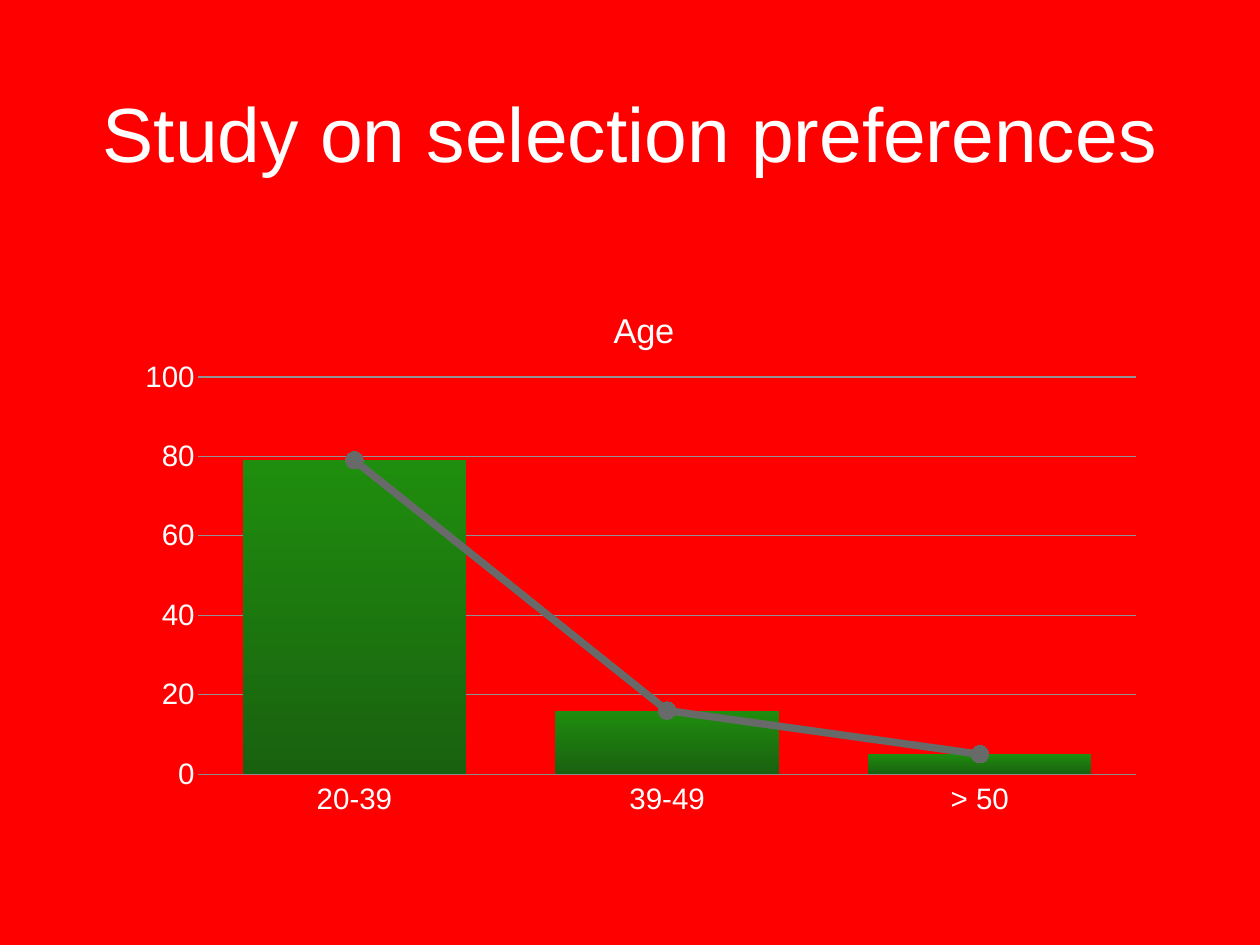
from dataclasses import dataclass

from lxml import etree
from pptx import Presentation
from pptx.chart.chart import Chart
from pptx.chart.data import CategoryChartData
from pptx.dml.color import RGBColor
from pptx.enum.chart import XL_CHART_TYPE, XL_MARKER_STYLE, XL_TICK_LABEL_POSITION, XL_TICK_MARK
from pptx.enum.text import MSO_ANCHOR, MSO_AUTO_SIZE, PP_ALIGN
from pptx.oxml.ns import qn
from pptx.util import Inches, Pt

COLUMN_CLUSTERED = XL_CHART_TYPE.COLUMN_CLUSTERED
CIRCLE = XL_MARKER_STYLE.CIRCLE
LABELS_LOW = XL_TICK_LABEL_POSITION.LOW
NO_TICKS = XL_TICK_MARK.NONE
MIDDLE = MSO_ANCHOR.MIDDLE
NO_AUTOFIT = MSO_AUTO_SIZE.NONE
CENTER = PP_ALIGN.CENTER


@dataclass(frozen=True)
class Theme:
    font: str = "Arial"
    background: str = "FF0000"
    text: str = "FFFFFF"
    column_top: str = "1F8D0E"
    column_bottom: str = "1A610F"
    trend: str = "686A69"
    axis: str = "8A8B89"
    grid: str = "929292"
    title_size: float = 62.4
    chart_title_size: float = 28
    label_size: float = 24


@dataclass(frozen=True)
class Series:
    name: str
    values: tuple[int, ...]


THEME = Theme()
AGE_GROUPS = ("20-39", "39-49", "> 50")
AGE_SHARES = (79, 16, 5)
SERIES = (Series("Series 1", AGE_SHARES), Series("Series 2", AGE_SHARES))


def color(value: str) -> RGBColor:
    return RGBColor.from_string(value)


def style_font(font, size: float) -> None:
    font.name = THEME.font
    font.size = Pt(size)
    font.bold = False
    font.color.rgb = color(THEME.text)


def style_line(line, value: str, width: float) -> None:
    line.width = Pt(width)
    line.color.rgb = color(value)


def add_chart_element(parent, tag: str, value: str | None = None):
    element = etree.SubElement(parent, qn(f"c:{tag}"))
    if value is not None:
        element.set("val", value)
    return element


def set_layout(parent, index: int, **settings: str | float) -> None:
    """Give a chart part a manual position, in fractions of the chart."""
    for old_layout in parent.findall(qn("c:layout")):
        parent.remove(old_layout)
    layout = add_chart_element(parent, "layout")
    parent.insert(index, layout)
    manual = add_chart_element(layout, "manualLayout")
    for tag, value in settings.items():
        add_chart_element(manual, tag, str(value))


def move_last_series_to_line(chart: Chart) -> None:
    column_plot = chart.plots[0]._element
    series = column_plot.findall(qn("c:ser"))[-1]
    for invert in series.findall(qn("c:invertIfNegative")):
        series.remove(invert)
    line_plot = etree.Element(qn("c:lineChart"))
    column_plot.addnext(line_plot)
    add_chart_element(line_plot, "grouping", "standard")
    add_chart_element(line_plot, "varyColors", "0")
    line_plot.append(series)
    add_chart_element(line_plot, "marker", "1")
    for axis_id in column_plot.findall(qn("c:axId")):
        add_chart_element(line_plot, "axId", axis_id.get("val"))


def style_series(chart: Chart) -> None:
    columns, trend = chart.plots
    columns.gap_width = 40
    columns.overlap = -10
    columns.vary_by_categories = False
    fill = columns.series[0].format.fill
    fill.gradient()
    fill.gradient_angle = 270
    for stop, position, value in zip(
        fill.gradient_stops, (0, 1), (THEME.column_top, THEME.column_bottom)
    ):
        stop.position = position
        stop.color.rgb = color(value)

    trend_series = trend.series[0]
    trend_series.smooth = False
    style_line(trend_series.format.line, THEME.trend, 6)
    marker = trend_series.marker
    marker.style = CIRCLE
    marker.size = 14
    marker.format.fill.solid()
    marker.format.fill.fore_color.rgb = color(THEME.trend)
    marker.format.line.fill.background()


def style_axes(chart: Chart) -> None:
    for axis in (chart.category_axis, chart.value_axis):
        axis.major_tick_mark = axis.minor_tick_mark = NO_TICKS
        axis.tick_labels.number_format = "General"
        axis.tick_labels.number_format_is_linked = False
        style_font(axis.tick_labels.font, THEME.label_size)
    chart.category_axis.tick_label_position = LABELS_LOW
    style_line(chart.category_axis.format.line, THEME.axis, 1)

    value_axis = chart.value_axis
    value_axis.minimum_scale = 0
    value_axis.maximum_scale = 100
    value_axis.major_unit = 20
    value_axis.format.line.fill.background()
    value_axis.has_major_gridlines = True
    style_line(value_axis.major_gridlines.format.line, THEME.grid, 1)


def add_slide_title(slide, text: str) -> None:
    title = slide.shapes.title
    title.left, title.top = Inches(1.04), Inches(0.44)
    title.width, title.height = Inches(12.14), Inches(2.1)
    frame = title.text_frame
    frame.text = text
    frame.auto_size = NO_AUTOFIT
    frame.word_wrap = True
    frame.vertical_anchor = MIDDLE
    frame.margin_left = frame.margin_right = Inches(0.06)
    frame.margin_top = frame.margin_bottom = Inches(0.06)
    paragraph = frame.paragraphs[0]
    paragraph.alignment = CENTER
    style_font(paragraph.runs[0].font, THEME.title_size)


def add_age_chart(slide) -> None:
    data = CategoryChartData()
    data.categories = AGE_GROUPS
    for series in SERIES:
        data.add_series(series.name, series.values)
    chart = slide.shapes.add_chart(
        COLUMN_CLUSTERED, Inches(1.56), Inches(3.36), Inches(11.27), Inches(5.98), data
    ).chart
    chart.has_legend = False
    style_font(chart.font, 10)
    move_last_series_to_line(chart)
    style_series(chart)
    style_axes(chart)

    # Chart title, laid over the chart area
    chart.has_title = True
    frame = chart.chart_title.text_frame
    frame.text = "Age"
    style_font(frame.paragraphs[0].runs[0].font, THEME.chart_title_size)
    title = chart.chart_title._element
    title.find(qn("c:overlay")).set("val", "1")
    set_layout(title, 1, xMode="edge", yMode="edge", x=0.47, y=0.01)

    # Inner plot area
    plot_area = chart.plots[0]._element.getparent()
    set_layout(plot_area, 0, layoutTarget="inner", xMode="edge", yMode="edge",
               x=0.06, y=0.15, w=0.94, h=0.75)


def main() -> None:
    presentation = Presentation()
    presentation.slide_width, presentation.slide_height = Inches(14.22), Inches(10.67)
    slide = presentation.slides.add_slide(presentation.slide_layouts[5])
    slide.background.fill.solid()
    slide.background.fill.fore_color.rgb = color(THEME.background)
    add_slide_title(slide, "Study on selection preferences")
    add_age_chart(slide)
    presentation.save("out.pptx")


if __name__ == "__main__":
    main()
